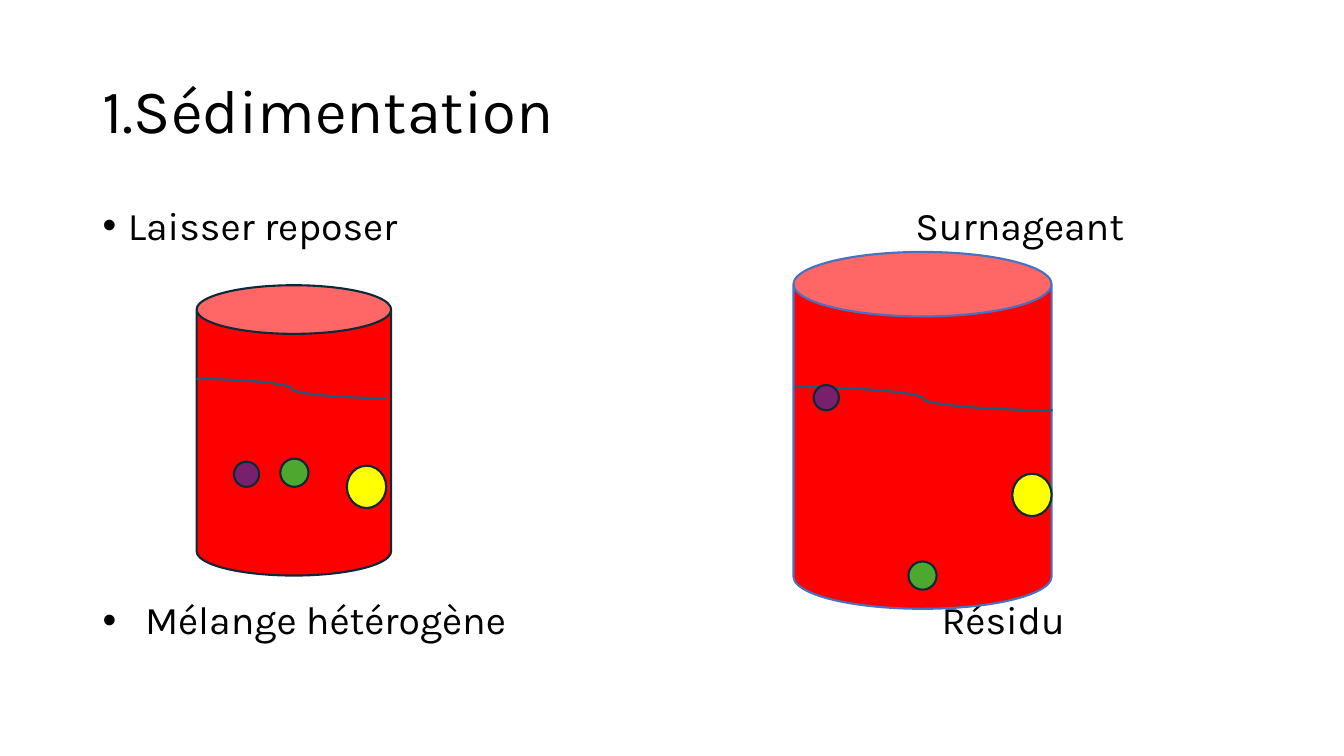
from lxml import etree
from pptx import Presentation
from pptx.dml.color import RGBColor
from pptx.enum.shapes import MSO_CONNECTOR, MSO_SHAPE
from pptx.enum.text import MSO_ANCHOR
from pptx.oxml.ns import qn
from pptx.util import Inches, Pt

BLACK = RGBColor(0x00, 0x00, 0x00)
RED = RGBColor(0xFF, 0x00, 0x00)
PURPLE = RGBColor(0x78, 0x20, 0x6E)
GREEN = RGBColor(0x4E, 0xA7, 0x2E)
YELLOW = RGBColor(0xFF, 0xFF, 0x00)
NAVY = RGBColor(0x09, 0x2A, 0x39)
BLUE = RGBColor(0x44, 0x72, 0xC4)
TEAL = RGBColor(0x15, 0x60, 0x82)

PARTICLES = [(PURPLE, 0.25, 0.25), (GREEN, 0.28, 0.28), (YELLOW, 0.39, 0.42)]


class SlideBuilder:
    """Holds the font, the line width and the slide being drawn."""

    def __init__(self, s, font="Karla", line_width=1.5):
        self.s = s
        self.font = font
        self.line_width = Pt(line_width)

    def text(self, text, x, y, w, h, size=28, anchor=MSO_ANCHOR.TOP, bullet_indent=0):
        tf = self.s.shapes.add_textbox(Inches(x), Inches(y), Inches(w), Inches(h)).text_frame
        tf.word_wrap = True
        tf.vertical_anchor = anchor
        p = tf.paragraphs[0]
        p.line_spacing = 0.9
        r = p.add_run()
        r.text = text
        r.font.name = self.font
        r.font.size = Pt(size)
        r.font.color.rgb = BLACK
        if bullet_indent:
            pPr = p._p.get_or_add_pPr()
            pPr.set("marL", str(Inches(bullet_indent)))
            pPr.set("indent", str(-Inches(bullet_indent)))
            etree.SubElement(pPr, qn("a:buFont")).set("typeface", "Arial")
            etree.SubElement(pPr, qn("a:buChar")).set("char", "•")

    def shape(self, kind, x, y, w, h, fill, line=NAVY):
        sp = self.s.shapes.add_shape(kind, Inches(x), Inches(y), Inches(w), Inches(h))
        sp.shadow.inherit = False
        sp.fill.solid()
        sp.fill.fore_color.rgb = fill
        sp.line.color.rgb = line
        sp.line.width = self.line_width

    def curve(self, x1, y1, x2, y2):
        cn = self.s.shapes.add_connector(
            MSO_CONNECTOR.CURVE, Inches(x1), Inches(y1), Inches(x2), Inches(y2))
        cn.line.color.rgb = TEAL
        cn.line.width = self.line_width
        etree.SubElement(cn._element.spPr, qn("a:effectLst"))

    def beaker(self, box, outline, surface, spots):
        self.shape(MSO_SHAPE.CAN, *box, RED, outline)
        self.curve(*surface)
        for (color, w, h), (x, y) in zip(PARTICLES, spots):
            self.shape(MSO_SHAPE.FLOWCHART_CONNECTOR, x, y, w, h, color)


def main():
    prs = Presentation()
    prs.slide_width, prs.slide_height = Inches(13.33), Inches(7.5)
    b = SlideBuilder(prs.slides.add_slide(prs.slide_layouts[6]))

    b.text("1.Sédimentation", 0.92, 0.4, 11.5, 1.45, size=44, anchor=MSO_ANCHOR.MIDDLE)
    rows = [(2, "Laisser reposer", 0.25, "Surnageant", 8.98),
            (5.91, "Mélange hétérogène", 0.42, "Résidu", 9.24)]
    for y, item, indent, label, label_x in rows:
        b.text(item, 0.92, y, 6, 0.55, bullet_indent=indent)
        b.text(label, label_x, y, 3, 0.55)

    b.beaker((1.95, 2.83, 1.93, 2.88), NAVY, (1.95, 3.76, 3.83, 3.95),
             [(2.32, 4.58), (2.78, 4.55), (3.44, 4.62)])
    b.beaker((7.87, 2.5, 2.56, 3.54), BLUE, (7.88, 3.84, 10.44, 4.07),
             [(8.07, 3.82), (9.01, 5.57), (10.04, 4.7)])
    prs.save("out.pptx")


if __name__ == "__main__":
    main()
